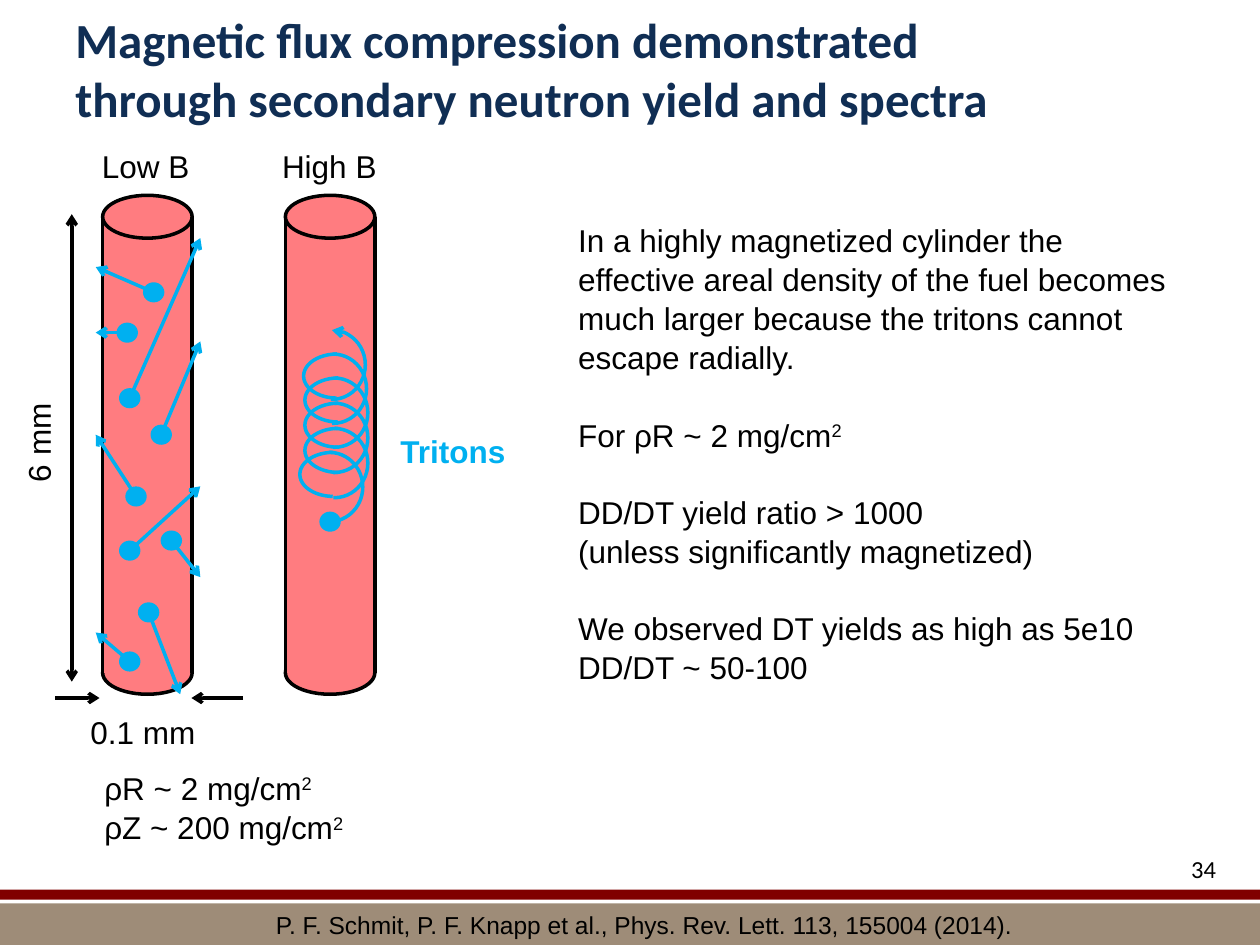
from lxml import etree
from pptx import Presentation
from pptx.dml.color import RGBColor
from pptx.enum.shapes import MSO_CONNECTOR, MSO_SHAPE
from pptx.enum.text import MSO_ANCHOR, MSO_AUTO_SIZE, PP_ALIGN
from pptx.oxml.ns import qn
from pptx.util import Inches, Pt

RECT, OVAL, ARC = MSO_SHAPE.RECTANGLE, MSO_SHAPE.OVAL, MSO_SHAPE.ARC
STRAIGHT = MSO_CONNECTOR.STRAIGHT
LEFT, CENTER, RIGHT = PP_ALIGN.LEFT, PP_ALIGN.CENTER, PP_ALIGN.RIGHT
TOP, MIDDLE = MSO_ANCHOR.TOP, MSO_ANCHOR.MIDDLE
GROW, FIXED = MSO_AUTO_SIZE.SHAPE_TO_FIT_TEXT, MSO_AUTO_SIZE.NONE

COLUMNS, ROWS = 1000, 750
CELL = Inches(10) // COLUMNS
COLORS = {
    "black": "000000", "title": "102E54", "triton": "00B0F0",
    "fuel": "FF7C80", "band": "9E8C78", "stripe": "800000",
}
LABEL = {"name": "Arial", "size": Pt(18), "bold": False}
TITLE = {"name": "Calibri", "size": Pt(28), "bold": True}
PAGE = {"name": "Calibri", "size": Pt(14), "bold": False}
CITATION = {**LABEL, "size": Pt(14)}
STRONG = {**LABEL, "bold": True}

CYLINDER_CENTERS = (117, 262)
CYLINDER_WIDTH, CYLINDER_TOP, CYLINDER_BOTTOM, RIM = 71, 172, 534, 34
TRITONS = [
    ((122, 232), (76, 212)), ((101, 264), (76, 264)),
    ((103, 316), (159, 189)), ((128, 345), (159, 271)),
    ((108, 394), (76, 345)), ((103, 437), (159, 386)),
    ((136, 429), (159, 458)), ((118, 486), (143, 551)),
    ((103, 525), (76, 502)),
]
COIL_TURNS = [(237, 262), (238, 281), (239, 300),
              (239, 320), (239, 340), (235, 359)]
RIGHT_SWEEP, LEFT_SWEEP = (162, 55.04), (54.76, 162.05)
FINDINGS = [
    ("In a highly magnetized cylinder the effective areal density of the fuel "
     "becomes much larger because the tritons cannot escape radially.", 0),
    ("For ρR ~ 2 mg/cm^2", 21.6),
    ("DD/DT yield ratio > 1000", 21.6),
    ("(unless significantly magnetized)", 0),
    ("We observed DT yields as high as 5e10", 21.6),
    ("DD/DT ~ 50-100", 0),
]


def color(key):
    return RGBColor.from_string(COLORS[key])


def grid(*cells):
    return [round(cell * CELL) for cell in cells]


def apply(target, values):
    for name, value in values.items():
        setattr(target, name, value)


def add_figure(slide, kind, box, fill=None, outline=None, rotation=0):
    figure = slide.shapes.add_shape(kind, *grid(*box))
    figure.shadow.inherit = False
    figure.rotation = rotation
    if fill:
        figure.fill.solid()
        figure.fill.fore_color.rgb = color(fill)
    else:
        figure.fill.background()
    if outline:
        figure.line.color.rgb = color(outline)
        figure.line.width = Pt(2)
    else:
        figure.line.fill.background()
    return figure


def add_turned(slide, kind, center, length, breadth, fill, outline=None):
    x, y = center
    box = (x - length / 2, y - breadth / 2, length, breadth)
    add_figure(slide, kind, box, fill, outline, 270)


def add_arrowheads(line, ends):
    for end in ends:
        etree.SubElement(line.get_or_add_ln(), qn(f"a:{end}"), type="arrow")


def add_line(slide, start, stop, tint="black", ends=()):
    line = slide.shapes.add_connector(STRAIGHT, *grid(*start, *stop))
    line.line.color.rgb = color(tint)
    line.line.width = Pt(2)
    add_arrowheads(line, ends)
    etree.SubElement(line._element.spPr, qn("a:effectLst"))


def add_text(slide, box, lines, font=LABEL, tint="black", align=LEFT,
             wrap=False, fit=GROW, anchor=TOP, rotation=0, spacing=1.0):
    area = slide.shapes.add_textbox(*grid(*box))
    area.rotation = rotation
    frame = area.text_frame
    apply(frame, {"word_wrap": wrap, "auto_size": fit,
                  "vertical_anchor": anchor})
    for index, (words, gap) in enumerate(lines):
        paragraph = frame.add_paragraph() if index else frame.paragraphs[0]
        apply(paragraph, {"alignment": align, "space_before": Pt(gap),
                          "line_spacing": spacing})
        for part, piece in enumerate(words.split("^")):
            run = paragraph.add_run()
            run.text = piece
            apply(run.font, font)
            run.font.color.rgb = color(tint)
            if part:
                run._r.get_or_add_rPr().set("baseline", "30000")


def add_cylinder(slide, x):
    middle = (CYLINDER_TOP + CYLINDER_BOTTOM) / 2
    height = CYLINDER_BOTTOM - CYLINDER_TOP
    add_turned(slide, OVAL, (x, CYLINDER_BOTTOM), RIM, CYLINDER_WIDTH,
               "fuel", "black")
    add_turned(slide, RECT, (x, middle), height, CYLINDER_WIDTH, "fuel")
    add_turned(slide, OVAL, (x, CYLINDER_TOP), RIM, CYLINDER_WIDTH,
               "fuel", "black")
    for side in (x - CYLINDER_WIDTH / 2, x + CYLINDER_WIDTH / 2):
        add_line(slide, (side, CYLINDER_BOTTOM), (side, CYLINDER_TOP))


def add_triton(slide, center):
    add_turned(slide, OVAL, center, 16, 17, "triton")


def add_arc(slide, box, sweep):
    arc = add_figure(slide, ARC, box, outline="triton")
    arc.adjustments[0], arc.adjustments[1] = sweep
    return arc


def add_coil(slide):
    add_triton(slide, (262, 414))
    for turn, (x, y) in enumerate(COIL_TURNS):
        right_half = add_arc(slide, (x, y, 53, 55), RIGHT_SWEEP)
        if turn:
            add_arc(slide, (x + 3, y, 53, 35), LEFT_SWEEP)
        else:
            add_arrowheads(right_half, ["headEnd"])


def add_dimensions(slide):
    add_line(slide, (57, 170), (57, 541), ends=("headEnd", "tailEnd"))
    for start, stop in ((193, 152), (44, 79)):
        add_line(slide, (start, 554), (stop, 554), ends=["tailEnd"])
    add_text(slide, (-11, 331, 83, 40), [("6 mm", 0)], rotation=270)
    add_text(slide, (62, 561, 104, 40), [("0.1 mm", 0)])


def main():
    deck = Presentation()
    deck.slide_width, deck.slide_height = grid(COLUMNS, ROWS)
    slide = deck.slides.add_slide(deck.slide_layouts[6])

    add_figure(slide, RECT, (0, 717, COLUMNS, 33), "band")
    add_figure(slide, RECT, (0, 706, COLUMNS, 8), "stripe")
    add_text(slide, (50, 0, 900, 108),
             [("Magnetic flux compression demonstrated", 0),
              ("through secondary neutron yield and spectra", 0)],
             TITLE, "title", wrap=True, fit=FIXED, anchor=MIDDLE)
    add_text(slide, (908, 673, 67, 41), [("34", 0)], PAGE, align=RIGHT,
             wrap=True, fit=FIXED)
    add_text(slide, (205, 717, 613, 34),
             [("P. F. Schmit, P. F. Knapp et al., Phys. Rev. Lett. 113, "
               "155004 (2014).", 0)], CITATION, align=CENTER)

    for center in CYLINDER_CENTERS:
        add_cylinder(slide, center)
    for origin, escape in TRITONS:
        add_triton(slide, origin)
        add_line(slide, origin, escape, "triton", ["tailEnd"])
    add_coil(slide)
    add_dimensions(slide)

    add_text(slide, (71, 112, 90, 40), [("Low B", 0)])
    add_text(slide, (214, 112, 96, 40), [("High B", 0)])
    add_text(slide, (308, 338, 104, 40), [("Tritons", 0)], STRONG, "triton")
    add_text(slide, (73, 604, 213, 71),
             [("ρR ~ 2 mg/cm^2", 0), ("ρZ ~ 200 mg/cm^2", 0)], spacing=1.04)
    add_text(slide, (449, 169, 501, 364), FINDINGS, wrap=True, spacing=1.04)
    deck.save("out.pptx")


if __name__ == "__main__":
    main()
